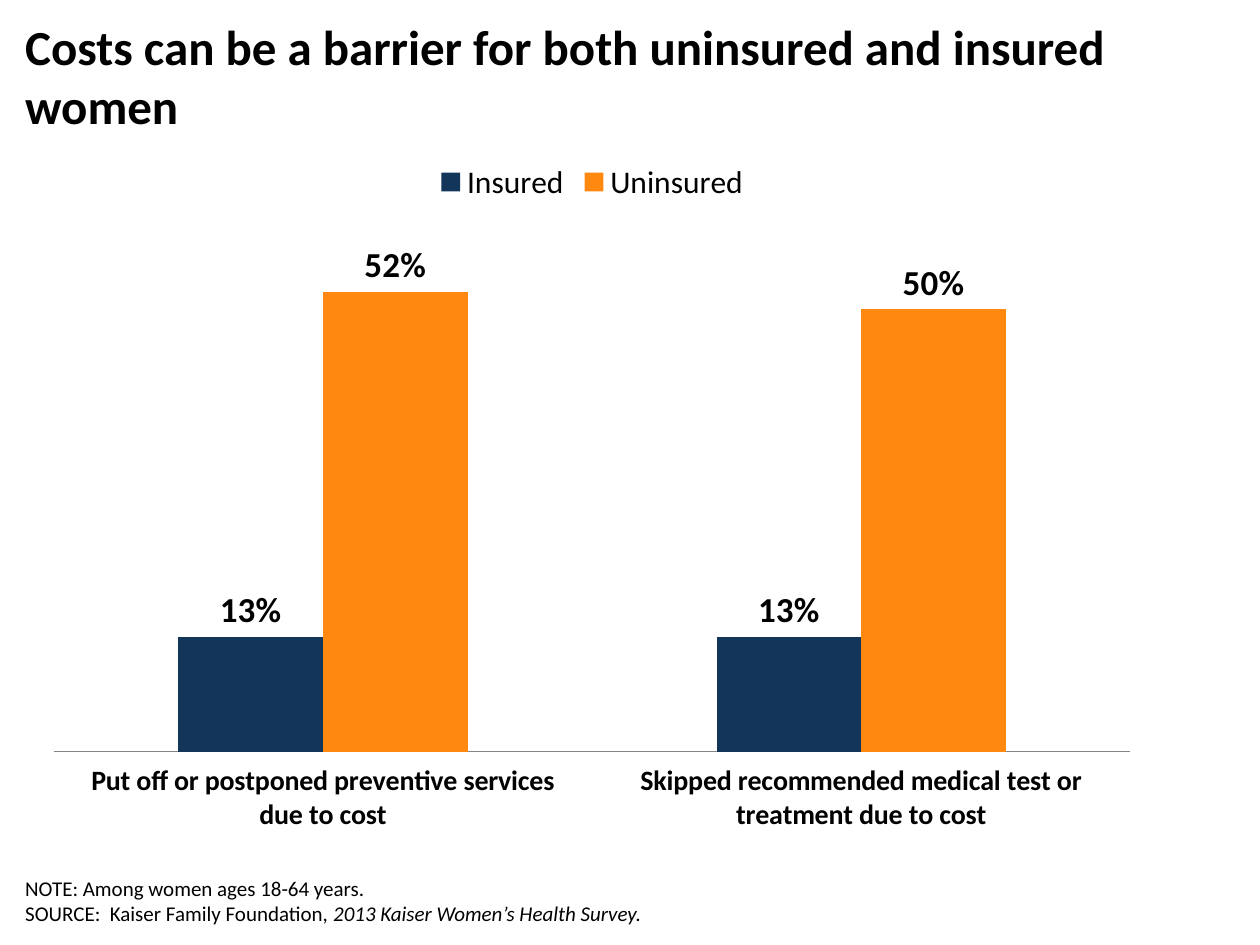
from lxml import etree
from pptx import Presentation
from pptx.chart.data import CategoryChartData
from pptx.dml.color import RGBColor as RGB
from pptx.enum.chart import (XL_CHART_TYPE as CT, XL_LABEL_POSITION as LP,
                             XL_LEGEND_POSITION as LEG, XL_TICK_LABEL_POSITION as TLP,
                             XL_TICK_MARK as TM)
from pptx.enum.text import MSO_ANCHOR as ANCHOR, PP_ALIGN as ALIGN
from pptx.oxml import parse_xml
from pptx.oxml.ns import qn
from pptx.util import Pt

# Content
TITLE = "Costs can be a barrier for both uninsured and insured women"
NOTES = [
    [("NOTE: Among women ages 18-64 years.", False)],
    [("SOURCE:  Kaiser Family Foundation, ", False),
     ("2013 Kaiser Women’s Health Survey.", True)],
]
CATEGORIES = ["Put off or postponed preventive services due to cost",
              "Skipped recommended medical test or treatment due to cost"]
SERIES = [("Insured", (0.13, 0.13), "navy"),
          ("Uninsured", (0.52, 0.50), "orange")]
COLORS = {"text": "000000", "navy": "133559", "orange": "FF8811", "axis": "868686"}
FONT = "Calibri"
PLOT = {"x": 0.02, "y": 0.106, "w": 0.96, "h": 0.766}  # fractions of the chart


def color(name):
    return RGB.from_string(COLORS[name])


def set_font(font, size, bold=False, italic=False):
    font.name, font.size, font.bold, font.italic = FONT, Pt(size), bold, italic
    font.color.rgb = color("text")


def add_text(p, text, **fmt):
    r = p.add_run()
    r.text = text
    set_font(r.font, **fmt)


def place(sp, left, top, width, height, anchor):
    sp.left, sp.top, sp.width, sp.height = Pt(left), Pt(top), Pt(width), Pt(height)
    tf = sp.text_frame
    tf.word_wrap = True
    tf.vertical_anchor = anchor
    return tf


def set_plot_area(chart):
    area = chart._chartSpace.find(".//" + qn("c:plotArea"))
    for old in area.findall(qn("c:layout")):
        area.remove(old)
    layout = parse_xml(
        '<c:layout xmlns:c="http://schemas.openxmlformats.org/drawingml/2006/chart">'
        '<c:manualLayout><c:layoutTarget val="inner"/>'
        '<c:xMode val="edge"/><c:yMode val="edge"/></c:manualLayout></c:layout>')
    for key, value in PLOT.items():
        etree.SubElement(layout[0], qn("c:" + key)).set("val", str(value))
    area.insert(0, layout)


prs = Presentation()
prs.slide_width, prs.slide_height = Pt(720), Pt(540)
s = prs.slides.add_slide(prs.slide_layouts[1])
title, notes = s.placeholders[0], s.placeholders[1]

# Chart
data = CategoryChartData(number_format="0%")
data.categories = CATEGORIES
for name, values, _ in SERIES:
    data.add_series(name, values)
chart = s.shapes.add_chart(CT.COLUMN_CLUSTERED, Pt(18), Pt(84.24),
                           Pt(640.8), Pt(396), data).chart
set_font(chart.font, 18)
chart.has_title = False
chart.has_legend = True
chart.legend.position = LEG.TOP
chart.legend.include_in_layout = False
set_font(chart.legend.font, 18)
set_plot_area(chart)

# Axes
cat, val = chart.category_axis, chart.value_axis
cat.major_tick_mark = cat.minor_tick_mark = TM.NONE
cat.tick_label_position = TLP.LOW
cat.format.line.color.rgb = color("axis")
cat.format.line.width = Pt(0.75)
set_font(cat.tick_labels.font, 16, bold=True)
val.minimum_scale, val.maximum_scale = 0, 0.6
val.has_major_gridlines = False
val.visible = False

# Columns and their labels
plot = chart.plots[0]
plot.gap_width, plot.overlap = 172, 0
plot.vary_by_categories = False
for series, (_, _, fill) in zip(plot.series, SERIES):
    series.format.fill.solid()
    series.format.fill.fore_color.rgb = color(fill)
    labels = series.data_labels
    labels.show_value = True
    labels.number_format, labels.number_format_is_linked = "0%", False
    labels.position = LP.OUTSIDE_END
    set_font(labels.font, 20, bold=True)

# Title
tf = place(title, 7.2, 7.2, 705.6, 72, ANCHOR.MIDDLE)
tf.paragraphs[0].alignment = ALIGN.LEFT
add_text(tf.paragraphs[0], TITLE, size=28, bold=True)

# Note and source
tf = place(notes, 7.2, 489.6, 655.2, 43.2, ANCHOR.BOTTOM)
for i, runs in enumerate(NOTES):
    p = tf.paragraphs[0] if i == 0 else tf.add_paragraph()
    pPr = p._p.get_or_add_pPr()
    pPr.set("marL", "0")
    pPr.set("indent", "0")
    etree.SubElement(pPr, qn("a:buNone"))
    p.space_before = Pt(0)
    for text, italic in runs:
        add_text(p, text, size=12, italic=italic)

prs.save("out.pptx")
